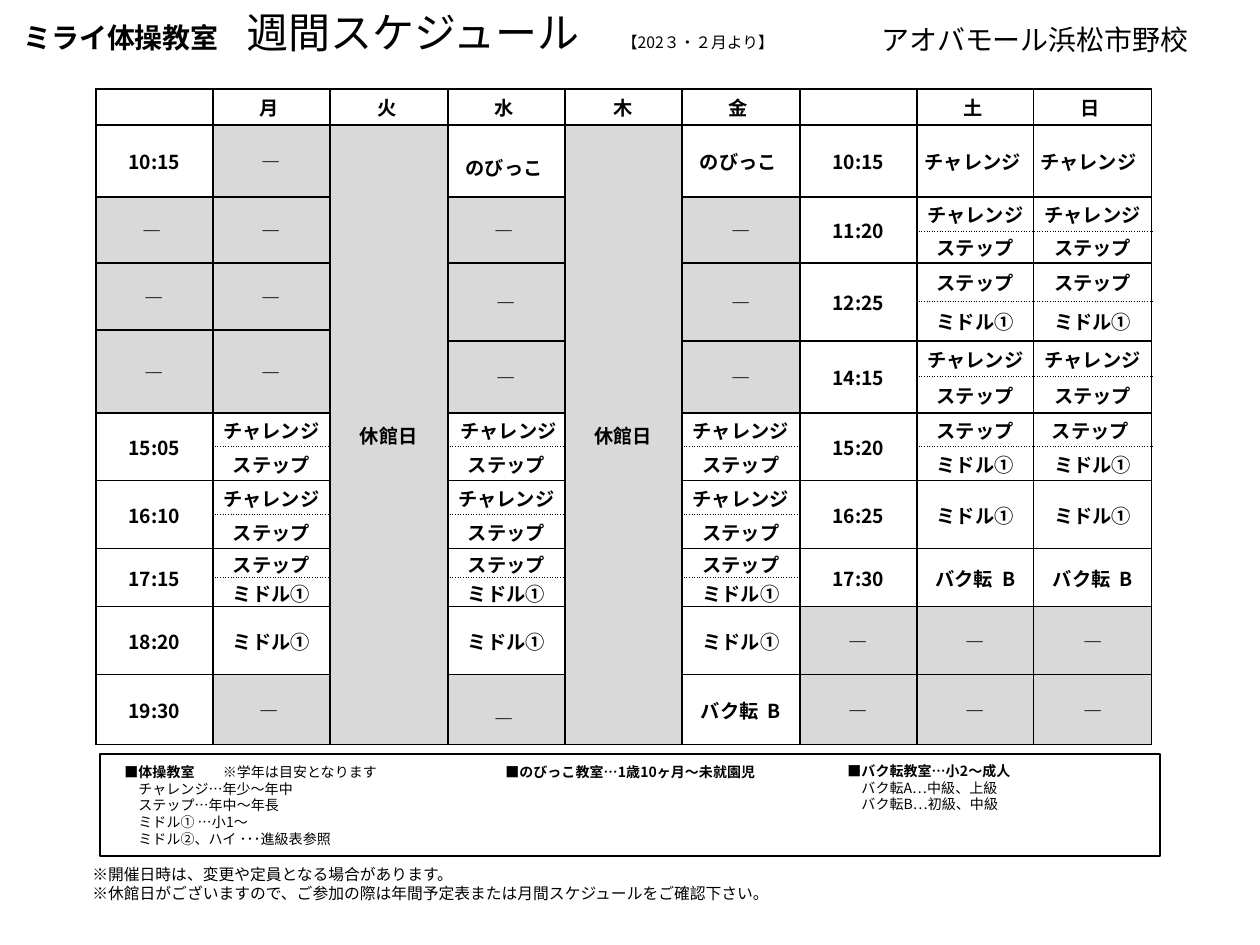
import lxml.etree
import pptx
import pptx.dml.color
import pptx.enum.shapes
import pptx.enum.text
import pptx.oxml.ns
import pptx.util

PX = 914400 / 126
THEME = {
    "font": "Noto Sans CJK JP",
    "ink": "000000",
    "closed": "D9D9D9",
    "open": "FFFFFF",
    "title": 24,
    "heading": 16,
    "cell": 11,
    "note": 9,
    "legend": 8,
    "leading": 1.2,
}
ROW_HEIGHTS = [36, 72, 34, 32, 38, 29, 11, 36, 36, 34, 34, 34, 34, 29, 29, 68, 70]
CHALLENGE, STEP, MIDDLE, FLIP, TODDLER = "チャレンジ", "ステップ", "ミドル①", "バク転  B", "のびっこ "
CLOSED_DAY = "休館日"
EVENING = {9: CHALLENGE, 10: STEP, 11: CHALLENGE, 12: STEP, 13: STEP, 14: MIDDLE, 15: MIDDLE}
WEEKEND = {1: CHALLENGE + " ", 2: CHALLENGE, 3: STEP, 4: STEP, 5: MIDDLE, 7: CHALLENGE, 8: STEP,
           9: STEP, 10: MIDDLE, 11: MIDDLE, 13: FLIP, 15: "―", 16: "―"}
COLUMNS = [
    {0: "", 1: "10:15", 2: "― ", 4: "―", 6: "―", 9: "15:05", 11: "16:10", 13: "17:15",
     15: "18:20", 16: "19:30"},
    {0: "月 ", 1: "―", 2: "―", 4: "―", 6: "―", **EVENING, 16: "― "},
    {0: "火 ", 1: CLOSED_DAY},
    {0: "水 ", 1: TODDLER, 2: "― ", 4: "―", 7: "―", **EVENING, 9: " " + CHALLENGE, 16: "― "},
    {0: "木", 1: CLOSED_DAY},
    {0: "金 ", 1: TODDLER, 2: "―", 4: "―", 7: "―", **EVENING, 16: FLIP},
    {0: "", 1: "10:15", 2: "11:20", 4: "12:25", 7: "14:15", 9: "15:20", 11: "16:25",
     13: "17:30", 15: "―", 16: "―"},
    {0: "土 ", **WEEKEND},
    {0: "日 ", **WEEKEND, 1: CHALLENGE + "  ", 9: STEP + " "},
]
SLOT_STARTS = (2, 4, 7, 9, 11, 13)
PAIRS = {(CHALLENGE, STEP), (STEP, MIDDLE)}
LOWERED = {(1, 3): 12, (16, 3): 16}


def px(length):
    """Turn px into EMU."""
    return pptx.util.Emu(round(length * PX))


def color(name):
    """Give a theme colour."""
    return pptx.dml.color.RGBColor.from_string(THEME[name])


def add_span(para, text, size, bold=False):
    """Add one formatted run to a paragraph."""
    span = para.add_run()
    span.text = text
    formats = {"name": THEME["font"], "size": pptx.util.Pt(THEME[size]), "bold": bold}
    for key, value in formats.items():
        setattr(span.font, key, value)
    span.font.color.rgb = color("ink")
    east_asian = lxml.etree.SubElement(span.font._element, pptx.oxml.ns.qn("a:ea"))
    east_asian.set("typeface", THEME["font"])


def add_text(page, box, lines):
    """Place a text box whose lines are lists of (text, size, bold) spans."""
    frame = page.shapes.add_textbox(*map(px, box)).text_frame
    formats = {"word_wrap": True, "auto_size": pptx.enum.text.MSO_AUTO_SIZE.NONE}
    for key, value in formats.items():
        setattr(frame, key, value)
    for index, spans in enumerate(lines):
        para = frame.add_paragraph() if index else frame.paragraphs[0]
        tallest = max(THEME[size] for _, size, _ in spans)
        para.line_spacing = pptx.util.Pt(round(tallest * THEME["leading"], 1))
        for text, size, bold in spans:
            add_span(para, text, size, bold)


def add_header(page, box):
    """Place the title and the branch name along the top."""
    left, top, width, height = box
    add_text(page, (left, top, 824, height), [[
        ("ミライ体操教室　", "heading", True),
        ("週間スケジュール　", "title", False),
        ("【202３・２月より】", "note", False),
    ]])
    add_text(page, (left + 858, top + 16, width - 858, 47),
             [[("アオバモール浜松市野校", "heading", False)]])


def set_borders(cell, dotted_sides):
    """Draw the four borders of a cell, dotted on the given sides."""
    properties = cell._tc.get_or_add_tcPr()
    for side in "LRTB":
        dotted = side in dotted_sides
        line = lxml.etree.SubElement(properties, pptx.oxml.ns.qn("a:ln" + side))
        line.set("w", str(pptx.util.Pt(0.5 if dotted else 1)))
        fill = lxml.etree.SubElement(line, pptx.oxml.ns.qn("a:solidFill"))
        lxml.etree.SubElement(fill, pptx.oxml.ns.qn("a:srgbClr")).set("val", THEME["ink"])
        dash = lxml.etree.SubElement(line, pptx.oxml.ns.qn("a:prstDash"))
        dash.set("val", "sysDot" if dotted else "solid")


def fill_cell(cell, text, dotted_sides, lowered):
    """Format one cell of the timetable and write its text."""
    formats = {
        "vertical_anchor": pptx.enum.text.MSO_ANCHOR.MIDDLE,
        "margin_left": px(1),
        "margin_right": px(1),
        "margin_top": px(1 + lowered),
        "margin_bottom": 0,
    }
    for key, value in formats.items():
        setattr(cell, key, value)
    set_borders(cell, dotted_sides)
    cell.fill.solid()
    closed = text == CLOSED_DAY or text.strip() == "―"
    cell.fill.fore_color.rgb = color("closed" if closed else "open")
    if text == CLOSED_DAY:
        cell._tc.get_or_add_tcPr().set("vert", "eaVert")
    para = cell.text_frame.paragraphs[0]
    para.alignment = pptx.enum.text.PP_ALIGN.CENTER
    if text:
        add_span(para, text, "cell", True)
    else:
        lxml.etree.SubElement(para._p, pptx.oxml.ns.qn("a:endParaRPr")).set("sz", "100")


def is_pair(entries, row):
    """Tell whether two classes share the time slot that starts at a row."""
    labels = entries.get(row, "").strip(), entries.get(row + 1)
    return row in SLOT_STARTS and labels in PAIRS


def add_timetable(page, box):
    """Place the weekly timetable, column by column."""
    width, row_count, column_count = box[2], len(ROW_HEIGHTS), len(COLUMNS)
    table = page.shapes.add_table(row_count, column_count, *map(px, box)).table
    table.first_row = table.horz_banding = False
    for row, height in zip(table.rows, ROW_HEIGHTS):
        row.height = px(height)
    for index, entries in enumerate(COLUMNS):
        table.columns[index].width = px(width * (index + 1) // column_count
                                        - width * index // column_count)
        starts = sorted(entries)
        for start, end in zip(starts, starts[1:] + [row_count]):
            dotted = "T" * is_pair(entries, start - 1) + "B" * is_pair(entries, start)
            for row in range(start, end):
                text = entries[start] if row == start else ""
                fill_cell(table.cell(row, index), text, dotted, LOWERED.get((row, index), 0))
            if end - start > 1:
                table.cell(start, index).merge(table.cell(end - 1, index))


def add_legend(page, box):
    """Place the framed guide to the classes."""
    left, top, width, height = box
    add_text(page, (left + 12, top + 3, 360, 97), [
        [("■体操教室　　", "legend", True), ("※学年は目安となります", "legend", False)],
        [("　チャレンジ…年少～年中", "legend", False)],
        [("　ステップ…年中～年長", "legend", False)],
        [("　ミドル① …小1～", "legend", False)],
        [("　ミドル②、ハイ ･･･進級表参照", "legend", False)],
    ])
    add_text(page, (left + 393, top + 3, 276, 68),
             [[("■のびっこ教室…1歳10ヶ月～未就園児", "legend", True)]])
    add_text(page, (left + 735, top + 2, 360, 63), [
        [("■バク転教室…小2～成人", "legend", True)],
        [("　バク転A…中級、上級", "legend", False)],
        [("　バク転B…初級、中級", "legend", False)],
    ])
    frame = page.shapes.add_shape(pptx.enum.shapes.MSO_SHAPE.RECTANGLE, *map(px, box))
    frame.shadow.inherit = False
    frame.fill.background()
    frame.line.color.rgb = color("ink")
    frame.line.width = pptx.util.Pt(1)


def add_notes(page, box):
    """Place the remarks at the foot."""
    add_text(page, box, [
        [("※開催日時は、変更や定員となる場合があります。", "note", False)],
        [("※休館日がございますので、ご参加の際は年間予定表または月間スケジュールをご確認下さい。",
          "note", False)],
    ])


def main():
    """Build and save the schedule."""
    deck = pptx.Presentation()
    deck.slide_width, deck.slide_height = px(1260), px(945)
    page = deck.slides.add_slide(deck.slide_layouts[6])
    add_header(page, (11, 0, 1249, 63))
    add_notes(page, (80, 859, 866, 50))
    add_legend(page, (100, 754, 1060, 102))
    add_timetable(page, (96, 89, 1056, sum(ROW_HEIGHTS)))
    deck.save("out.pptx")


if __name__ == "__main__":
    main()
